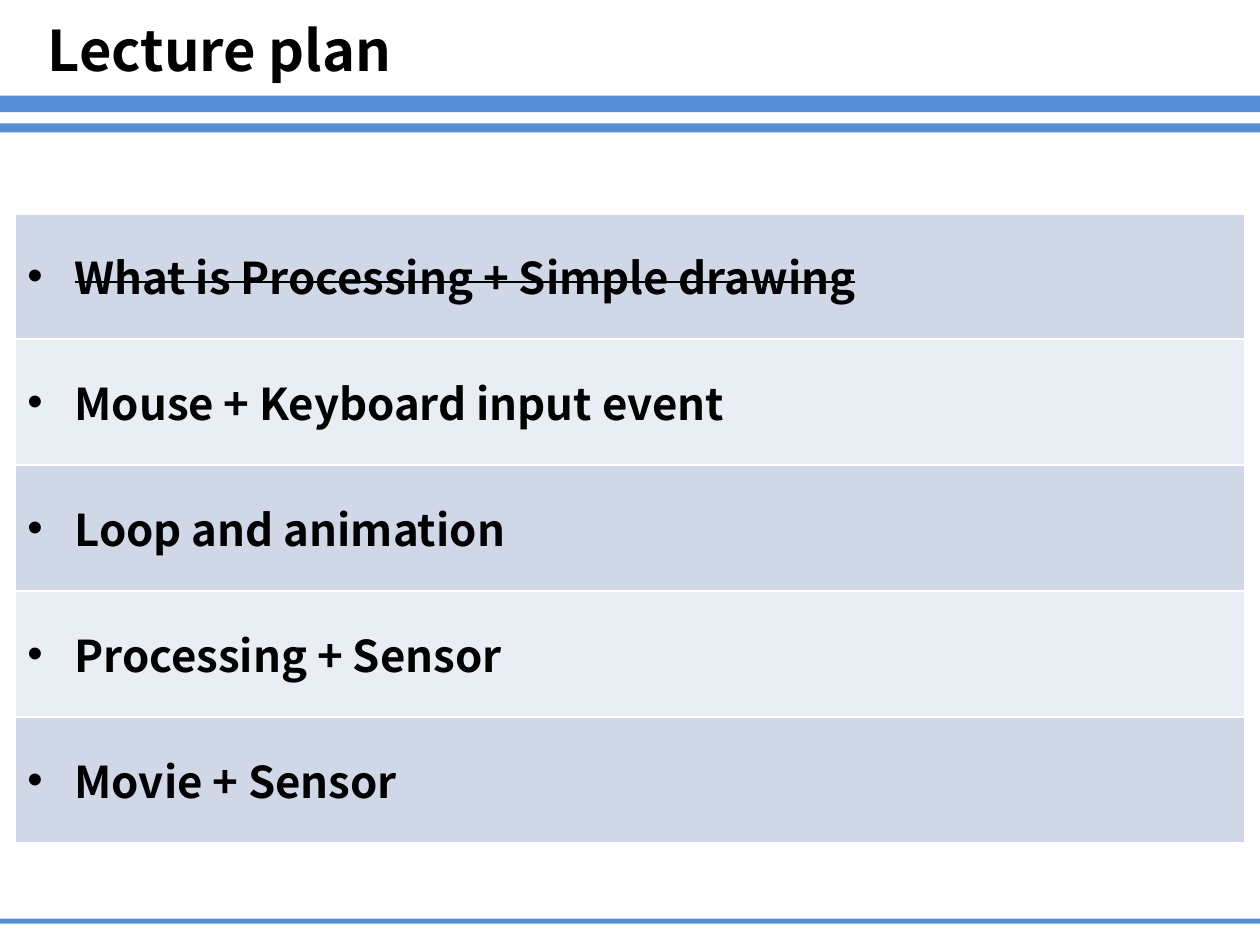
import pptx
import pptx.dml.color
import pptx.enum.shapes
import pptx.enum.text
import pptx.oxml
import pptx.oxml.ns
import pptx.util
from lxml import etree

Cm = pptx.util.Cm
Pt = pptx.util.Pt
qn = pptx.oxml.ns.qn

COLORS = {
    "bar": "558ED5",
    "text": "000000",
    "border": "FFFFFF",
    "odd": "D0D8E8",
    "even": "E9EDF4",
}
FONT = "Noto Sans CJK KR"
WIDTH, HEIGHT = 25.4, 19.05

BARS = [(1.93, 0.33), (2.49, 0.18), (18.52, 0.1)]  # top, height
TOPICS = [
    "What is Processing + Simple drawing",
    "Mouse + Keyboard input event",
    "Loop and animation",
    "Processing + Sensor",
    "Movie + Sensor",
]


def rgb(name):
    return pptx.dml.color.RGBColor.from_string(COLORS[name])


def write(p, text, size=25, color="text", bold=True, strike=False):
    r = p.add_run()
    r.text = text
    r.font.size = Pt(size)
    r.font.bold = bold
    r.font.name = FONT
    r.font.color.rgb = rgb(color)
    rPr = r._r.get_or_add_rPr()
    etree.SubElement(rPr, qn("a:ea")).set("typeface", FONT)
    if strike:
        rPr.set("strike", "sngStrike")


def add_bullet(p, indent=0.95):
    """Give the paragraph a round bullet with a hanging indent in cm."""
    pPr = p._p.get_or_add_pPr()
    pPr.set("marL", str(Cm(indent)))
    pPr.set("indent", str(-Cm(indent)))
    etree.SubElement(pPr, qn("a:buFont")).set("typeface", "Arial")
    etree.SubElement(pPr, qn("a:buChar")).set("char", "•")


def set_borders(cell, **widths):
    """Draw the four borders; widths in points by side, 1 by default."""
    tcPr = cell._tc.get_or_add_tcPr()
    for side in "LRTB":
        ln = etree.SubElement(tcPr, qn(f"a:ln{side}"))
        ln.set("w", str(Pt(widths.get(side, 1))))
        fill = etree.SubElement(ln, qn("a:solidFill"))
        etree.SubElement(fill, qn("a:srgbClr")).set("val", COLORS["border"])


class Deck:
    def __init__(self):
        self.prs = pptx.Presentation()
        self.prs.slide_width = Cm(WIDTH)
        self.prs.slide_height = Cm(HEIGHT)
        self.s = self.prs.slides.add_slide(self.prs.slide_layouts[6])

    def bar(self, top, height):
        sp = self.s.shapes.add_shape(
            pptx.enum.shapes.MSO_SHAPE.RECTANGLE,
            0, Cm(top), Cm(WIDTH), Cm(height))
        sp.shadow.inherit = False
        sp.fill.solid()
        sp.fill.fore_color.rgb = rgb("bar")
        sp.line.fill.background()

    def title(self, text, left, top, width, height):
        sp = self.s.shapes.add_textbox(Cm(left), Cm(top), Cm(width), Cm(height))
        tf = sp.text_frame
        tf.word_wrap = False
        tf.auto_size = pptx.enum.text.MSO_AUTO_SIZE.SHAPE_TO_FIT_TEXT
        write(tf.paragraphs[0], text, size=32)

    def plan(self, topics, done, left, top, width, head=1.37, row=2.54):
        """One banded row per topic under an empty head; done ones are struck."""
        table = self.s.shapes.add_table(
            len(topics) + 1, 1, Cm(left), Cm(top), Cm(width),
            Cm(head + row * len(topics))).table
        table.first_row = table.horz_banding = False
        table.rows[0].height = Cm(head)
        set_borders(table.cell(0, 0), B=3)
        table.cell(0, 0).fill.background()
        for i, topic in enumerate(topics, start=1):
            table.rows[i].height = Cm(row)
            cell = table.cell(i, 0)
            set_borders(cell, T=3 if i == 1 else 1)
            cell.fill.solid()
            cell.fill.fore_color.rgb = rgb("odd" if i % 2 else "even")
            cell.vertical_anchor = pptx.enum.text.MSO_ANCHOR.MIDDLE
            p = cell.text_frame.paragraphs[0]
            add_bullet(p)
            write(p, topic, strike=i <= done)


def main():
    deck = Deck()
    for top, height in BARS:
        deck.bar(top, height)
    deck.title("Lecture plan", 0.71, 0.18, 8.08, 1.63)
    deck.plan(TOPICS, done=1, left=0.3, top=2.92, width=24.8)
    deck.prs.save("out.pptx")


if __name__ == "__main__":
    main()
